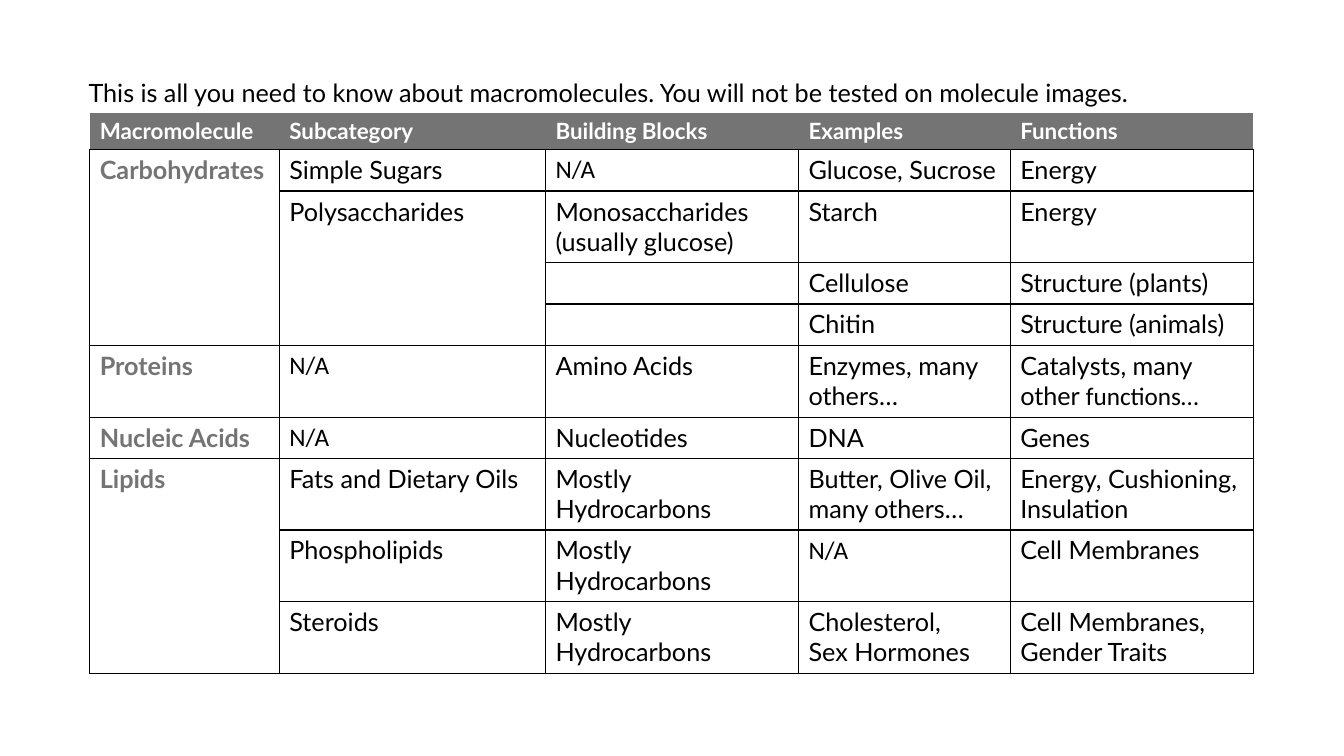
from dataclasses import dataclass

from lxml import etree
from pptx import Presentation
from pptx.dml.color import RGBColor
from pptx.enum.text import MSO_AUTO_SIZE
from pptx.oxml.ns import qn
from pptx.util import Inches, Pt

FIT_SHAPE = MSO_AUTO_SIZE.SHAPE_TO_FIT_TEXT


@dataclass(frozen=True)
class Theme:
    font: str = "Lato"
    alternate_font: str = "Calibri"
    black: str = "000000"
    white: str = "FFFFFF"
    gray: str = "747474"
    header_size: int = 16
    body_size: int = 18
    border_width: int = 1


THEME = Theme()

HEADERS = ["Macromolecule", "Subcategory", "Building Blocks", "Examples", "Functions"]
ROWS = [
    ["Carbohydrates", "Simple Sugars", "N/A", "Glucose, Sucrose", "Energy"],
    ["", "Polysaccharides", "Monosaccharides (usually glucose)", "Starch", "Energy"],
    ["", "", "", "Cellulose", "Structure (plants)"],
    ["", "", "", "Chitin", "Structure (animals)"],
    ["Proteins", "N/A", "Amino Acids", "Enzymes, many others…", "Catalysts, many other "],
    ["Nucleic Acids", "N/A", "Nucleotides", "DNA", "Genes"],
    ["Lipids", "Fats and Dietary Oils", "Mostly Hydrocarbons",
     "Butter, Olive Oil, many others…", "Energy, Cushioning, Insulation"],
    ["", "Phospholipids", "Mostly Hydrocarbons", "N/A", "Cell Membranes"],
    ["", "Steroids", "Mostly Hydrocarbons", "Cholesterol,\nSex Hormones",
     "Cell Membranes, Gender Traits"],
]
COLUMN_WIDTHS = [1.88, 2.64, 2.51, 2.1, 2.41]
HEADER_HEIGHT, SINGLE_HEIGHT, DOUBLE_HEIGHT = 0.36, 0.41, 0.71
TWO_LINE_ROWS = {2, 5, 7, 8, 9}
MERGES = [(1, 0, 4), (2, 1, 4), (7, 0, 9)]  # first row, column, last row
PROTEIN_ROW, FUNCTION_COLUMN = 5, 4


def style_run(run, size, color, bold=False, font=THEME.font):
    run.font.name = font
    run.font.size = Pt(size)
    run.font.bold = bold
    run.font.color.rgb = RGBColor.from_string(color)


def set_borders(cell, visible_sides):
    properties = cell._tc.get_or_add_tcPr()
    for side in "LRTB":
        line = etree.SubElement(properties, qn(f"a:ln{side}"), w=str(Pt(THEME.border_width)))
        if side in visible_sides:
            fill = etree.SubElement(line, qn("a:solidFill"))
            etree.SubElement(fill, qn("a:srgbClr"), val=THEME.black)
        else:
            etree.SubElement(line, qn("a:noFill"))


presentation = Presentation()
presentation.slide_width = Inches(13.33)
presentation.slide_height = Inches(7.5)
slide = presentation.slides.add_slide(presentation.slide_layouts[6])

# Table frame
row_heights = [HEADER_HEIGHT] + [
    DOUBLE_HEIGHT if row in TWO_LINE_ROWS else SINGLE_HEIGHT
    for row in range(1, len(ROWS) + 1)
]
table = slide.shapes.add_table(
    len(row_heights), len(COLUMN_WIDTHS), Inches(0.89), Inches(1.12),
    Inches(sum(COLUMN_WIDTHS)), Inches(sum(row_heights)),
).table
table.first_row = False
table.horz_banding = False
for column, width in zip(table.columns, COLUMN_WIDTHS):
    column.width = Inches(width)
for row, height in zip(table.rows, row_heights):
    row.height = Inches(height)

# Cells
for row_index, texts in enumerate([HEADERS] + ROWS):
    is_header = row_index == 0
    for column_index, text in enumerate(texts):
        cell = table.cell(row_index, column_index)
        set_borders(cell, "B" if is_header else "LRTB")
        cell.fill.solid()
        cell.fill.fore_color.rgb = RGBColor.from_string(THEME.gray if is_header else THEME.white)
        cell.text_frame.text = text
        is_label = column_index == 0
        if is_header:
            color = THEME.white
        else:
            color = THEME.gray if is_label else THEME.black
        size = THEME.header_size if is_header else THEME.body_size
        font = THEME.alternate_font if text == "N/A" else THEME.font
        for paragraph in cell.text_frame.paragraphs:
            for run in paragraph.runs:
                style_run(run, size, color, is_header or is_label, font)

# Last word of the protein functions, in the alternate font
protein_functions = table.cell(PROTEIN_ROW, FUNCTION_COLUMN).text_frame.paragraphs[0]
last_word = protein_functions.add_run()
last_word.text = "functions…"
style_run(last_word, THEME.body_size, THEME.black, font=THEME.alternate_font)

# Groups spanning several rows
for first_row, column_index, last_row in MERGES:
    table.cell(first_row, column_index).merge(table.cell(last_row, column_index))

# Introductory sentence
intro = slide.shapes.add_textbox(Inches(0.78), Inches(0.72), Inches(12.8), Inches(0.4))
intro.text_frame.word_wrap = True
intro.text_frame.auto_size = FIT_SHAPE
intro.text_frame.text = (
    "This is all you need to know about macromolecules. "
    "You will not be tested on molecule images."
)
style_run(intro.text_frame.paragraphs[0].runs[0], THEME.body_size, THEME.black)

presentation.save("out.pptx")
